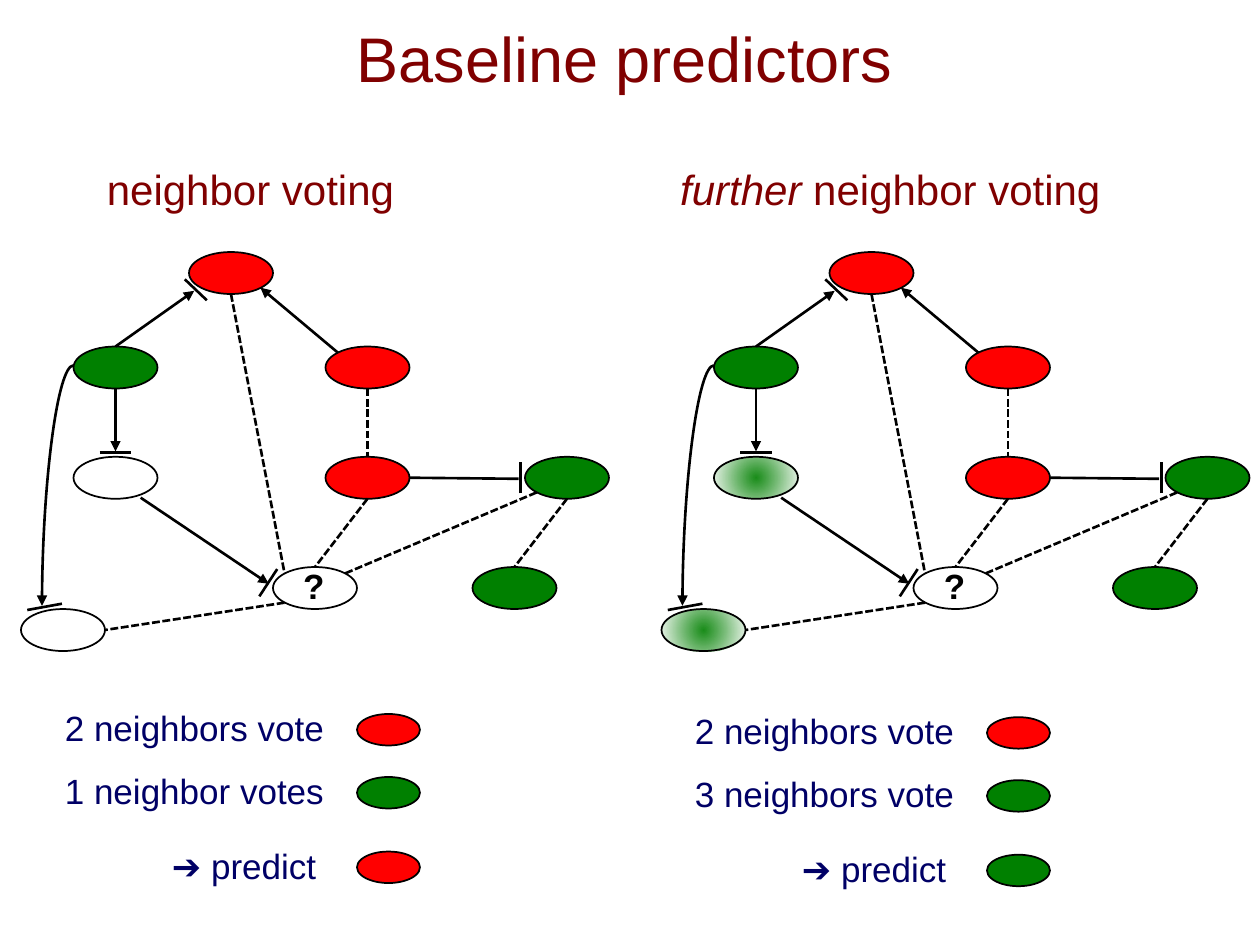
from dataclasses import dataclass
from typing import NamedTuple, Optional

from lxml.etree import SubElement
from pptx import Presentation
from pptx.dml.color import RGBColor
from pptx.enum.dml import MSO_LINE
from pptx.enum.shapes import MSO_CONNECTOR, MSO_SHAPE
from pptx.enum.text import MSO_ANCHOR, PP_ALIGN
from pptx.oxml import parse_xml
from pptx.oxml.ns import nsdecls, qn
from pptx.util import Emu, Pt

PX = 7620  # EMU per px, 120 px to the inch


@dataclass(frozen=True)
class Theme:
    font: str = "Arial"
    heading: str = "800000"
    note: str = "000066"
    ink: str = "000000"
    red: str = "FF0000"
    green: str = "008000"
    title_size: int = 36
    heading_size: int = 24
    note_size: int = 20
    outline: float = 1
    edge: float = 1.5


THEME = Theme()
FADED = "faded"  # green fading to white, for neighbors reached in the second step


class Box(NamedTuple):
    x: int
    y: int
    w: int
    h: int


class Node(NamedTuple):
    x: int
    y: int
    fill: Optional[str] = None
    inferred: bool = False


class Edge(NamedTuple):
    x1: int
    y1: int
    x2: int
    y2: int
    dashed: bool = False
    arrow: bool = False
    curved: bool = False


class Vote(NamedTuple):
    text: str
    fill: str


class Panel(NamedTuple):
    graph_dx: int
    heading_box: Box
    heading: list[tuple[str, bool]]  # text, italic
    inferred_fill: Optional[str]
    legend_x: int
    legend_y: int
    votes: list[Vote]


NODES = [
    Node(310, 330, THEME.red), Node(70, 330, THEME.green), Node(180, 240, THEME.red),
    Node(310, 435, THEME.red), Node(70, 435, inferred=True), Node(260, 540),
    Node(500, 435, THEME.green), Node(20, 580, inferred=True), Node(450, 540, THEME.green),
]
EDGES = [
    # undirected links
    Edge(220, 280, 271, 546, dashed=True), Edge(350, 370, 350, 435, dashed=True),
    Edge(540, 475, 490, 540, dashed=True), Edge(511, 469, 329, 546, dashed=True),
    Edge(350, 475, 300, 540, dashed=True), Edge(271, 574, 100, 600, dashed=True),
    # directed links
    Edge(110, 330, 185, 277, arrow=True), Edge(110, 370, 110, 430, arrow=True),
    Edge(134, 474, 256, 556, arrow=True), Edge(322, 336, 248, 274, arrow=True),
    Edge(70, 348, 40, 577, arrow=True, curved=True), Edge(390, 455, 494, 456),
    # end bars
    Edge(95, 431, 125, 431), Edge(247, 568, 264, 542), Edge(176, 266, 197, 286),
    Edge(26, 581, 59, 575), Edge(496, 470, 496, 440),
]
PANELS = [
    Panel(0, Box(90, 150, 300, 60), [("neighbor voting", False)], None, 50, 667,
          [Vote("2 neighbors vote", THEME.red), Vote("1 neighbor votes", THEME.green),
           Vote("➔ predict", THEME.red)]),
    Panel(610, Box(636, 150, 428, 60), [("further ", True), ("neighbor voting", False)],
          FADED, 650, 670,
          [Vote("2 neighbors vote", THEME.red), Vote("3 neighbors vote", THEME.green),
           Vote("➔ predict", THEME.green)]),
]
# Text box and y offset of each legend row
LEGEND_ROWS = [Box(0, 0, 274, 53), Box(0, 60, 274, 53), Box(102, 131, 170, 53)]


def rgb(color: str) -> RGBColor:
    return RGBColor.from_string(color)


def emu(*px: int) -> list[Emu]:
    return [Emu(v * PX) for v in px]


def add_text(s, box: Box, runs: list[tuple[str, bool]], size: int, color: str,
             bold: bool = False, wrap: bool = False, align=PP_ALIGN.LEFT) -> None:
    tf = s.shapes.add_textbox(*emu(*box)).text_frame
    tf.word_wrap = wrap
    tf.vertical_anchor = MSO_ANCHOR.MIDDLE if wrap else MSO_ANCHOR.TOP
    p = tf.paragraphs[0]
    p.alignment = align
    p.font.name, p.font.size, p.font.bold = THEME.font, Pt(size), bold
    p.font.color.rgb = rgb(color)
    for text, italic in runs:
        r = p.add_run()
        r.text = text
        if italic:
            r.font.italic = True


def fade(sp) -> None:
    grad = parse_xml(
        f'<a:gradFill {nsdecls("a")} rotWithShape="1"><a:gsLst>'
        f'<a:gs pos="0"><a:srgbClr val="{THEME.green}"><a:alpha val="90000"/></a:srgbClr></a:gs>'
        '<a:gs pos="100000"><a:srgbClr val="FFFFFF"/></a:gs></a:gsLst>'
        '<a:path path="circle"><a:fillToRect l="50000" t="50000" r="50000" b="50000"/></a:path>'
        '</a:gradFill>')
    sp.fill.background()
    empty = sp._element.spPr.find(qn("a:noFill"))
    empty.getparent().replace(empty, grad)


def add_oval(s, box: Box, fill: Optional[str]) -> None:
    sp = s.shapes.add_shape(MSO_SHAPE.OVAL, *emu(*box))
    sp.shadow.inherit = False
    sp.line.color.rgb = rgb(THEME.ink)
    sp.line.width = Pt(THEME.outline)
    if fill is None:
        sp.fill.background()
    elif fill == FADED:
        fade(sp)
    else:
        sp.fill.solid()
        sp.fill.fore_color.rgb = rgb(fill)


def add_edge(s, edge: Edge, dx: int) -> None:
    kind = MSO_CONNECTOR.CURVE if edge.curved else MSO_CONNECTOR.STRAIGHT
    c = s.shapes.add_connector(kind, *emu(edge.x1 + dx, edge.y1, edge.x2 + dx, edge.y2))
    c.line.color.rgb = rgb(THEME.ink)
    c.line.width = Pt(THEME.edge)
    spPr = c._element.spPr
    if edge.curved:
        spPr.find(qn("a:prstGeom")).set("prst", "curvedConnector2")
    if edge.dashed:
        c.line.dash_style = MSO_LINE.SQUARE_DOT
    if edge.arrow:
        SubElement(spPr.find(qn("a:ln")), qn("a:tailEnd"), type="triangle")
    SubElement(spPr, qn("a:effectLst"))


def add_panel(s, panel: Panel) -> None:
    # Heading
    add_text(s, panel.heading_box, panel.heading, THEME.heading_size, THEME.heading)
    # Network
    for node in NODES:
        fill = panel.inferred_fill if node.inferred else node.fill
        add_oval(s, Box(node.x + panel.graph_dx, node.y, 80, 40), fill)
    for edge in EDGES:
        add_edge(s, edge, panel.graph_dx)
    add_text(s, Box(277 + panel.graph_dx, 532, 44, 53), [("?", False)],
             THEME.note_size, THEME.ink, bold=True)
    # Votes
    for vote, row in zip(panel.votes, LEGEND_ROWS):
        x, y = panel.legend_x, panel.legend_y + row.y
        add_text(s, Box(x + row.x, y, row.w, row.h), [(vote.text, False)],
                 THEME.note_size, THEME.note)
        add_oval(s, Box(x + 290, y + 13, 60, 30), vote.fill)


def main() -> None:
    prs = Presentation()
    prs.slide_width, prs.slide_height = emu(1200, 900)
    s = prs.slides.add_slide(prs.slide_layouts[6])
    add_text(s, Box(20, 20, 1150, 70), [("Baseline predictors", False)],
             THEME.title_size, THEME.heading, wrap=True, align=PP_ALIGN.CENTER)
    for panel in PANELS:
        add_panel(s, panel)
    prs.save("out.pptx")


if __name__ == "__main__":
    main()
